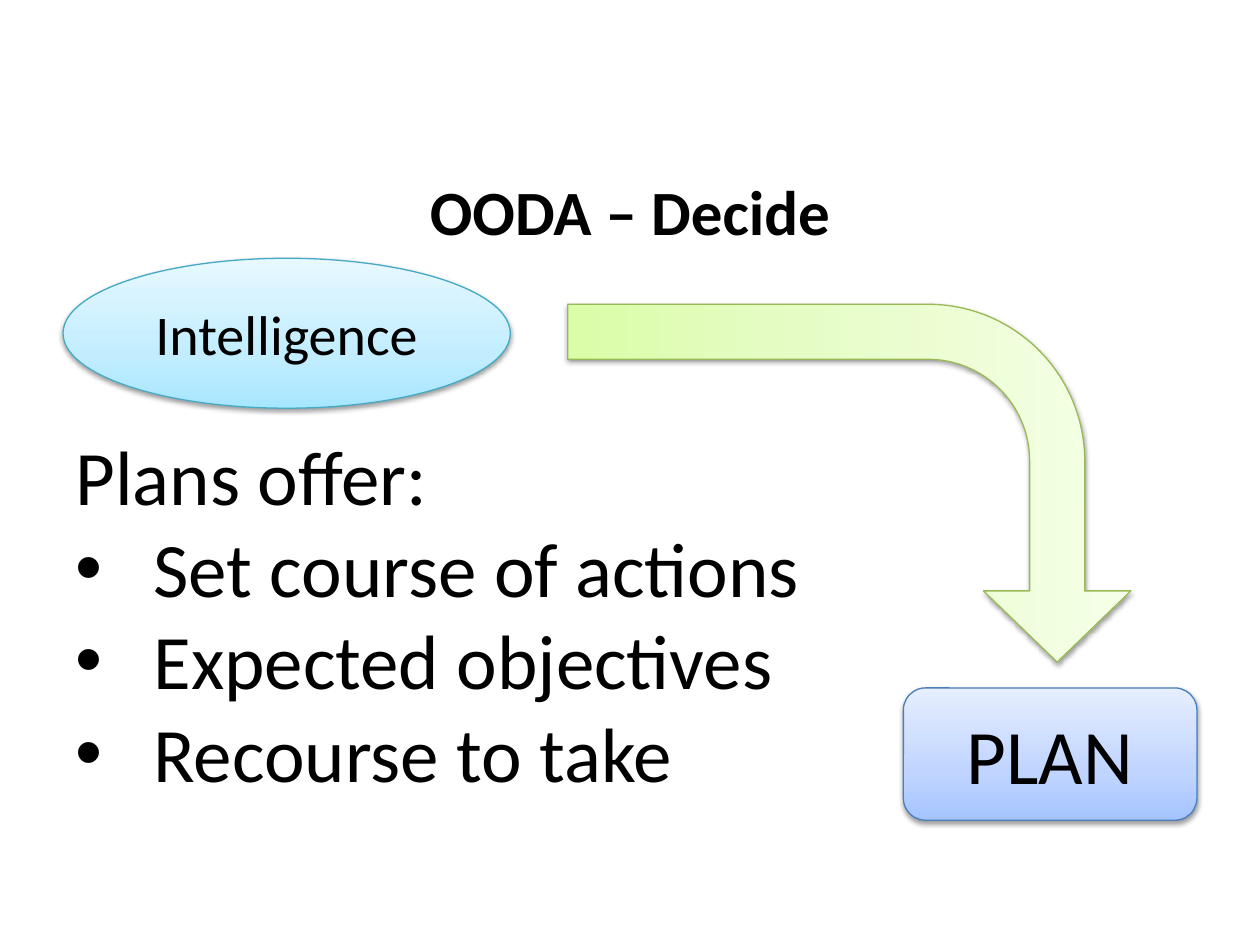
import pptx
import pptx.util
import pptx.oxml
import pptx.oxml.ns
import pptx.dml.color
import pptx.enum.shapes
import pptx.enum.text
from lxml import etree

Inches, Pt = pptx.util.Inches, pptx.util.Pt
KIND = pptx.enum.shapes.MSO_SHAPE
ALIGN = pptx.enum.text.PP_ALIGN
MIDDLE = pptx.enum.text.MSO_ANCHOR.MIDDLE
NS = pptx.oxml.ns.nsdecls("a")

FONT = "Calibri"
COLORS = {
    "text": "000000",
    "back": "FFFFFF",
    "aqua": ("A7E6FF", "C1EDFF", "E7F8FF"),
    "blue": ("A4C4FF", "BFD4FF", "E6EEFF"),
    "green": ("DAFDA7", "E4FCC2", "F5FFE7"),
    "aqua line": "46AAC5",
    "blue line": "4B7EBC",
    "green line": "98B955",
}
STOPS = (0, 35, 100)
INDENT = 0.62

TITLE = "OODA – Decide"
LEAD = "Plans offer:"
OFFERS = ["Set course of actions", "Expected objectives", "Recourse to take"]
# kind, place, hue, text, text size
NODES = [
    (KIND.OVAL, (0.5, 2.05, 3.55, 1.19), "aqua", "Intelligence", 32),
    (KIND.ROUNDED_RECTANGLE, (7.17, 5.46, 2.33, 1.05), "blue", "PLAN", 44),
]
ARROW = (5.32, 1.6, 2.84, 4.47)
BENDS = (0.154, 0.206, 0.199, 0.438)


def rgb(name):
    return pptx.dml.color.RGBColor.from_string(COLORS[name])


def style(para, size, bold=False, align=ALIGN.LEFT):
    para.alignment = align
    font = para.font
    font.name, font.size, font.bold = FONT, Pt(size), bold
    font.color.rgb = rgb("text")


def add_bullet(para):
    props = para._p.get_or_add_pPr()
    props.set("marL", str(Inches(INDENT)))
    props.set("indent", str(-Inches(INDENT)))
    etree.SubElement(props, pptx.oxml.ns.qn("a:buFont"), typeface="Arial")
    etree.SubElement(props, pptx.oxml.ns.qn("a:buChar"), char="•")


def add_box(slide, place):
    frame = slide.shapes.add_textbox(*map(Inches, place)).text_frame
    frame.word_wrap = True
    return frame


def add_glossy(slide, kind, place, hue):
    """Add a shape with an upward gradient and a soft shadow below."""
    shape = slide.shapes.add_shape(kind, *map(Inches, place))
    shape.line.color.rgb = rgb(hue + " line")
    shape.line.width = Pt(0.75)
    shape.shadow.inherit = False
    props = shape._element.spPr
    stops = "".join(
        f'<a:gs pos="{pos * 1000}"><a:srgbClr val="{color}"/></a:gs>'
        for pos, color in zip(STOPS, COLORS[hue]))
    geom = props.find(pptx.oxml.ns.qn("a:prstGeom"))
    geom.addnext(pptx.oxml.parse_xml(
        f'<a:gradFill {NS} rotWithShape="1"><a:gsLst>{stops}</a:gsLst>'
        '<a:lin ang="16200000" scaled="0"/></a:gradFill>'))
    props.find(pptx.oxml.ns.qn("a:effectLst")).append(pptx.oxml.parse_xml(
        f'<a:outerShdw {NS} blurRad="{Pt(3.1)}" dist="{Pt(1.6)}" '
        'dir="5400000" rotWithShape="0"><a:srgbClr val="000000">'
        '<a:alpha val="38000"/></a:srgbClr></a:outerShdw>'))
    return shape


def main():
    deck = pptx.Presentation()
    deck.slide_width, deck.slide_height = Inches(10), Inches(7.5)
    slide = deck.slides.add_slide(deck.slide_layouts[6])
    slide.background.fill.solid()
    slide.background.fill.fore_color.rgb = rgb("back")

    body = add_box(slide, (0.5, 3.35, 6.16, 3.06))
    body.text = "\n".join([LEAD] + OFFERS)
    for para in body.paragraphs[1:]:
        add_bullet(para)
    for para in body.paragraphs:
        style(para, 44)

    title = add_box(slide, (0.5, 1.29, 9, 0.76))
    title.vertical_anchor = MIDDLE
    title.text = TITLE
    style(title.paragraphs[0], 36, True, ALIGN.CENTER)

    for kind, place, hue, text, size in NODES:
        frame = add_glossy(slide, kind, place, hue).text_frame
        frame.vertical_anchor = MIDDLE
        frame.text = text
        style(frame.paragraphs[0], size, align=ALIGN.CENTER)

    arrow = add_glossy(slide, KIND.BENT_ARROW, ARROW, "green")
    arrow.rotation = 90
    for i, bend in enumerate(BENDS):
        arrow.adjustments[i] = bend

    deck.save("out.pptx")


if __name__ == "__main__":
    main()
